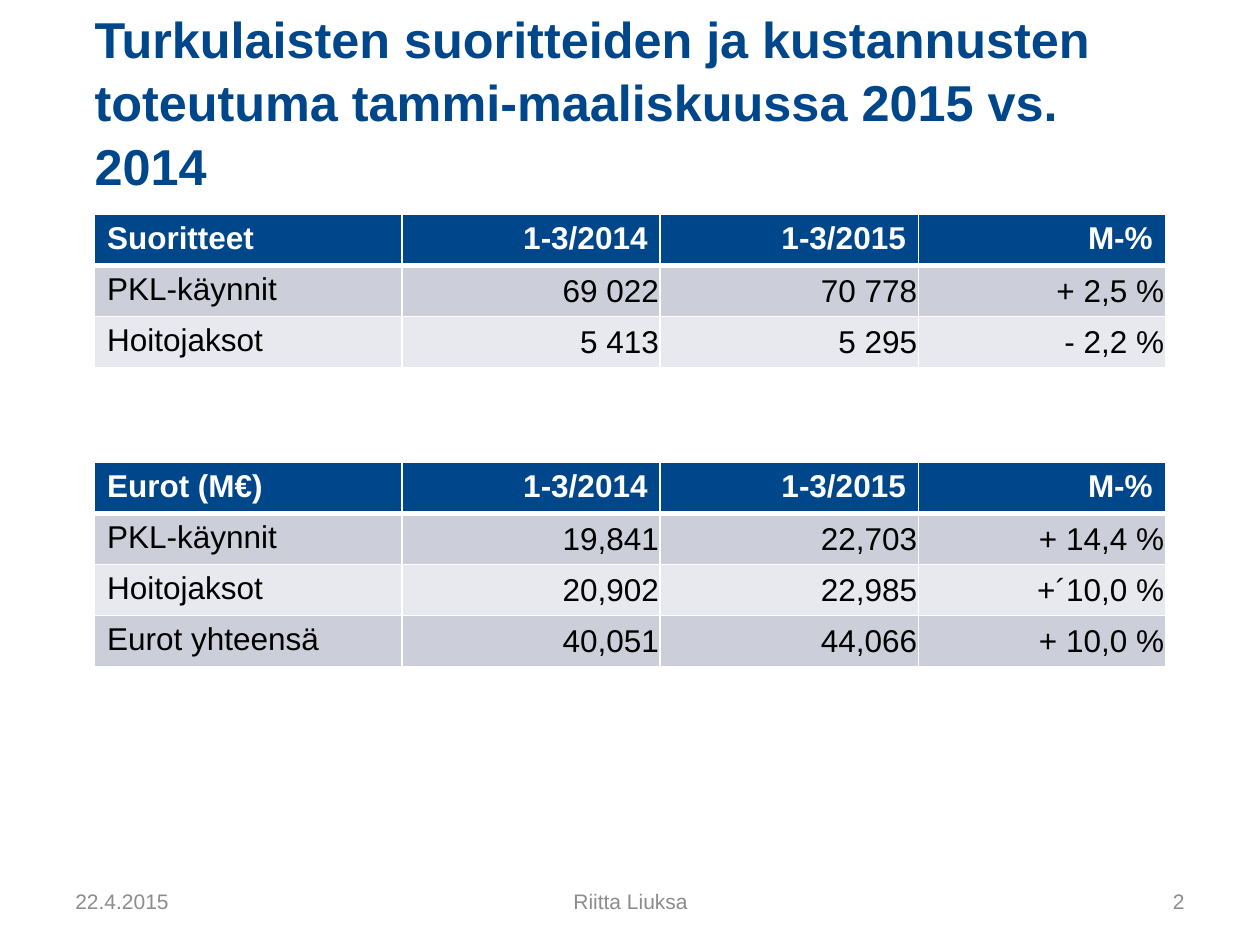
"""Build the slide comparing visits and costs for January-March 2015 and 2014."""
from dataclasses import dataclass

import pptx
import pptx.dml.color
import pptx.enum.text
import pptx.oxml
import pptx.oxml.ns
import pptx.util
from pptx.util import Inches


@dataclass(frozen=True)
class Theme:
    font: str = "Arial"
    blue: str = "00468B"
    white: str = "FFFFFF"
    black: str = "000000"
    grey: str = "8C8C8C"
    bands: tuple = ("CCCFDA", "E7E9EE")
    title_size: float = 28.8
    table_size: float = 18
    footer_size: float = 12


theme = Theme()
ALIGN = pptx.enum.text.PP_ALIGN
MIDDLE = pptx.enum.text.MSO_ANCHOR.MIDDLE


def style(paragraph, size, color, bold=False, align=ALIGN.LEFT):
    paragraph.alignment = align
    paragraph.font.name = theme.font
    paragraph.font.size = pptx.util.Pt(size)
    paragraph.font.bold = bold
    paragraph.font.color.rgb = pptx.dml.color.RGBColor.from_string(color)


def add_borders(cell, top, bottom):
    properties = cell._tc.get_or_add_tcPr()
    for side, points in (("L", 1), ("R", 1), ("T", top), ("B", bottom)):
        properties.append(pptx.oxml.parse_xml(
            f'<a:ln{side} {pptx.oxml.ns.nsdecls("a")} w="{pptx.util.Pt(points)}">'
            f'<a:solidFill><a:srgbClr val="{theme.white}"/></a:solidFill></a:ln{side}>'))


presentation = pptx.Presentation()
presentation.slide_width = Inches(10)
presentation.slide_height = Inches(7.5)
slide = presentation.slides.add_slide(presentation.slide_layouts.get_by_name("Title Only"))

title = slide.shapes.title
title.left, title.top, title.width, title.height = map(Inches, (0.75, 0.68, 8.5, 0.87))
heading = title.text_frame
heading.text = "Turkulaisten suoritteiden ja kustannusten toteutuma tammi-maaliskuussa 2015 vs. 2014"
heading.margin_left = heading.margin_right = heading.margin_top = heading.margin_bottom = 0
heading.vertical_anchor = pptx.enum.text.MSO_ANCHOR.BOTTOM
heading.auto_size = pptx.enum.text.MSO_AUTO_SIZE.NONE
heading.word_wrap = True
heading.paragraphs[0].line_spacing = 1.05
style(heading.paragraphs[0], theme.title_size, theme.blue, bold=True)

periods = ("1-3/2014", "1-3/2015", "M-%")
comparisons = (
    (1.7, 1.22, (
        ("Suoritteet", *periods),
        ("PKL-käynnit", "69 022", "70 778", "+ 2,5 %"),
        ("Hoitojaksot", "5 413", "5 295", "- 2,2 %"),
    )),
    (3.67, 1.62, (
        ("Eurot (M€)", *periods),
        ("PKL-käynnit", "19,841", "22,703", "+ 14,4 %"),
        ("Hoitojaksot", "20,902", "22,985", "+´10,0 %"),
        ("Eurot yhteensä", "40,051", "44,066", "+ 10,0 %"),
    )),
)
column_widths = (2.44, 2.05, 2.05, 1.96)

for top, height, rows in comparisons:
    table = slide.shapes.add_table(len(rows), len(column_widths), Inches(0.75), Inches(top),
                                   Inches(8.5), Inches(height)).table
    for column, width in zip(table.columns, column_widths):
        column.width = Inches(width)
    for row_index, row in enumerate(rows):
        is_header = row_index == 0
        fill = theme.blue if is_header else theme.bands[(row_index - 1) % 2]
        for column_index, value in enumerate(row):
            cell = table.cell(row_index, column_index)
            cell.text = value
            add_borders(cell, top=3 if row_index == 1 else 1, bottom=3 if is_header else 1)
            cell.fill.solid()
            cell.fill.fore_color.rgb = pptx.dml.color.RGBColor.from_string(fill)
            if column_index and not is_header:
                cell.vertical_anchor = MIDDLE
                cell.margin_left = cell.margin_right = cell.margin_top = Inches(0.01)
                cell.margin_bottom = 0
            style(cell.text_frame.paragraphs[0], theme.table_size,
                  theme.white if is_header else theme.black, bold=is_header,
                  align=ALIGN.RIGHT if column_index else ALIGN.LEFT)

for left, width, text, align in (
    (0.5, 2.33, "22.4.2015", ALIGN.LEFT),
    (3.42, 3.17, "Riitta Liuksa", ALIGN.CENTER),
    (7.17, 2.33, "2", ALIGN.RIGHT),
):
    footer = slide.shapes.add_textbox(Inches(left), Inches(6.95), Inches(width), Inches(0.4)).text_frame
    footer.text = text
    footer.word_wrap = True
    footer.vertical_anchor = MIDDLE
    style(footer.paragraphs[0], theme.footer_size, theme.grey, align=align)

presentation.save("out.pptx")
